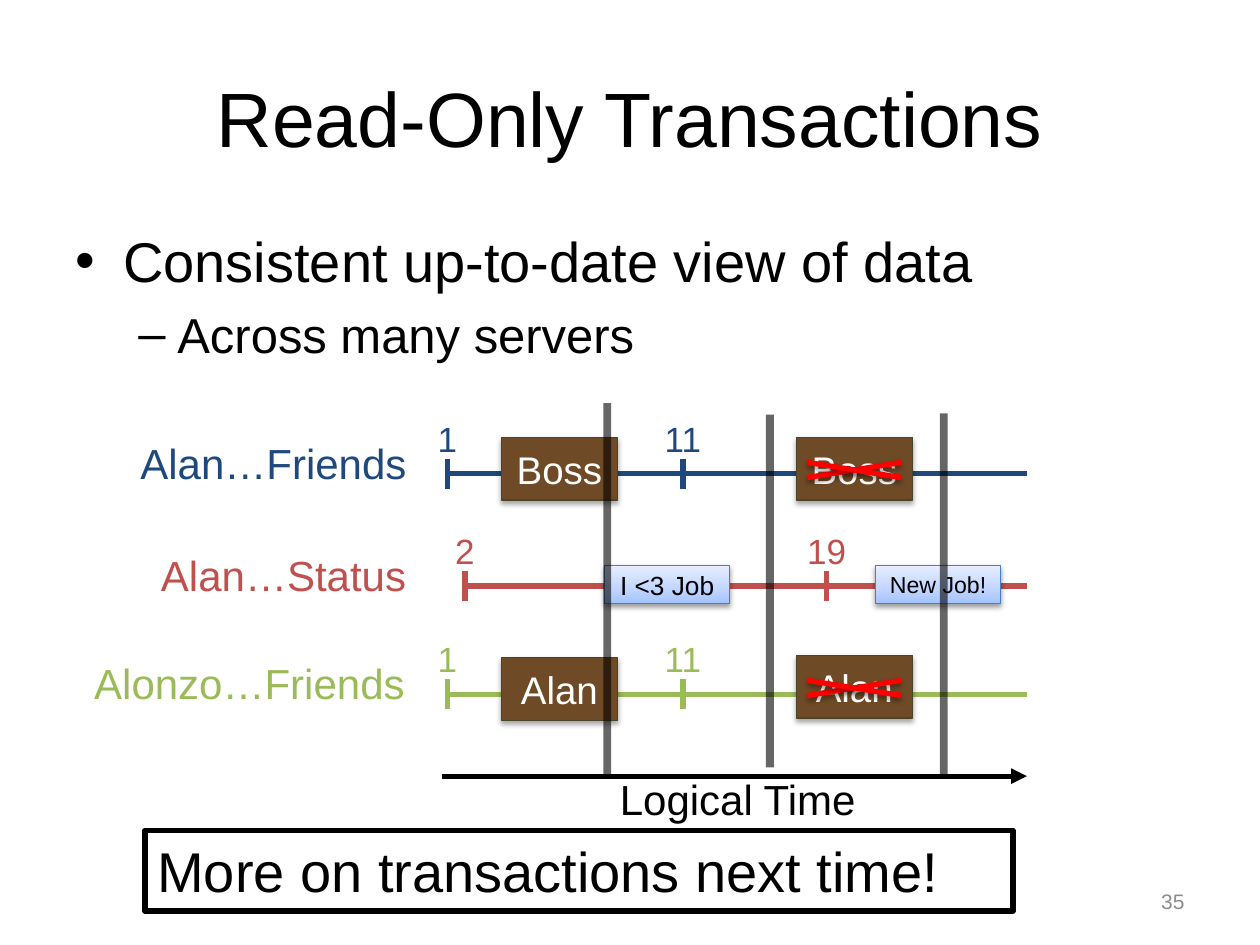
"""Build the Read-Only Transactions slide with its logical timeline diagram."""
from lxml import etree
from pptx import Presentation
from pptx import util as u
from pptx.dml.color import RGBColor
from pptx.enum import shapes, text
from pptx.oxml.ns import qn

BLACK = RGBColor(0x00, 0x00, 0x00)
WHITE = RGBColor(0xFF, 0xFF, 0xFF)
GRAY = RGBColor(0x8C, 0x8C, 0x8C)
NAVY = RGBColor(0x1F, 0x49, 0x7D)
BRICK = RGBColor(0xC0, 0x50, 0x4D)
GREEN = RGBColor(0x9B, 0xBB, 0x59)
BROWN = RGBColor(0x6F, 0x4A, 0x26)
OLIVE = RGBColor(0x4A, 0x45, 0x2A)
BLUE = RGBColor(0x4B, 0x7E, 0xBC)
RED = RGBColor(0xFF, 0x00, 0x00)
STATUS_GRADIENT = [
    (0, RGBColor(0xA4, 0xC4, 0xFF)),
    (35, RGBColor(0xBF, 0xD4, 0xFF)),
    (100, RGBColor(0xE6, 0xEE, 0xFF)),
]

TITLE = "Read-Only Transactions"
BULLETS = [
    ("Consistent up-to-date view of data", 32, "•", 0.38, -0.38, 4),
    ("Across many servers", 28, "–", 0.81, -0.31, 6),
]
TIMELINES = [
    {"label": "Alan…Friends", "width": 2.38, "y": 3.76, "color": NAVY,
     "ticks": [("1", 3.55), ("11", 5.42)],
     "friends": [("Boss", 3.98, 3.47, False), ("Boss", 6.32, 3.47, True)]},
    {"label": "Alan…Status", "width": 2.22, "y": 4.65, "color": BRICK,
     "ticks": [("2", 3.69), ("19", 6.56)],
     "statuses": [("New Job!", 6.95, 13.2), ("I <3 Job", 4.8, 15)]},
    {"label": "Alonzo…Friends", "width": 2.76, "y": 5.51, "color": GREEN,
     "ticks": [("1", 3.55), ("11", 5.42)],
     "friends": [("Alan", 3.98, 5.22, False), ("Alan", 6.32, 5.2, True)]},
]
READ_TIMES = [(4.82, 3.2, 6.16), (6.11, 3.29, 6.09), (7.49, 3.28, 6.16)]
LABEL_RIGHT, AXIS_RIGHT, TICK_HALF = 3.36, 8.15, 0.12
NUMBER_WIDTHS = {1: 0.36, 2: 0.51}
FRIEND_SHADOW, SOFT_SHADOW = (35, 1.8), (38, 1.6)

CENTER = text.PP_ALIGN.CENTER
MIDDLE = text.MSO_ANCHOR.MIDDLE


def apply_format(target, values):
    for name, value in values.items():
        setattr(target, name, value)


def add_child(parent, tag, **attributes):
    values = {name: str(value) for name, value in attributes.items()}
    return etree.SubElement(parent, qn(tag), values)


def add_shadow(effects, shadow):
    alpha, distance = shadow
    outer = add_child(effects, "a:outerShdw", blurRad=u.Pt(3.1), dist=u.Pt(distance),
                      dir=5400000, rotWithShape=0)
    color = add_child(outer, "a:srgbClr", val=BLACK)
    add_child(color, "a:alpha", val=alpha * 1000)


def write(paragraph, words, size, color, **layout):
    run = paragraph.add_run()
    run.text = words
    apply_format(run.font, {"size": u.Pt(size), "name": "Arial"})
    run.font.color.rgb = color
    apply_format(paragraph, layout)


def add_text(slide, box, words, size, color, align=CENTER, wrap=False):
    shape = slide.shapes.add_textbox(*map(u.Inches, box))
    apply_format(shape.text_frame, {"word_wrap": wrap, "vertical_anchor": MIDDLE})
    write(shape.text_frame.paragraphs[0], words, size, color, alignment=align)


def add_bullets(slide, box):
    frame = slide.shapes.add_textbox(*map(u.Inches, box)).text_frame
    frame.word_wrap = True
    for index, (words, size, bullet, margin, indent, gap) in enumerate(BULLETS):
        paragraph = frame.add_paragraph() if index else frame.paragraphs[0]
        write(paragraph, words, size, BLACK, level=index, space_before=u.Pt(gap))
        properties = paragraph._p.get_or_add_pPr()
        properties.set("marL", str(u.Inches(margin)))
        properties.set("indent", str(u.Inches(indent)))
        add_child(properties, "a:buFont", typeface="Arial")
        add_child(properties, "a:buChar", char=bullet)


def add_line(slide, start, end, color, width=3, alpha=None, arrow=False, shadow=None):
    connector = slide.shapes.add_connector(
        shapes.MSO_CONNECTOR.STRAIGHT, *map(u.Inches, (*start, *end)))
    connector.line.width = u.Pt(width)
    connector.line.color.rgb = color
    properties = connector.element.spPr
    outline = properties.find(qn("a:ln"))
    if alpha:
        add_child(next(outline.iter(qn("a:srgbClr"))), "a:alpha", val=alpha * 1000)
    if arrow:
        add_child(outline, "a:tailEnd", type="triangle")
    effects = add_child(properties, "a:effectLst")
    if shadow:
        add_shadow(effects, shadow)


def add_box(slide, box, outline, width=0.75, shadow=None):
    shape = slide.shapes.add_shape(shapes.MSO_SHAPE.RECTANGLE, *map(u.Inches, box))
    shape.line.color.rgb = outline
    shape.line.width = u.Pt(width)
    shape.shadow.inherit = False
    if shadow:
        add_shadow(shape.element.spPr.find(qn("a:effectLst")), shadow)
    apply_format(shape.text_frame, {"word_wrap": False, "vertical_anchor": MIDDLE})
    return shape


def add_friend(slide, name, left, top, removed):
    shape = add_box(slide, (left, top, 0.92, 0.5), OLIVE, shadow=FRIEND_SHADOW)
    shape.fill.solid()
    shape.fill.fore_color.rgb = BROWN
    write(shape.text_frame.paragraphs[0], name, 22, WHITE, alignment=CENTER)
    if removed:
        high, low = top + 0.2, top + 0.32
        for begin, end in ((low, high), (high, low)):
            add_line(slide, (left + 0.09, begin), (left + 0.83, end), RED,
                     shadow=SOFT_SHADOW)


def add_status(slide, words, left, size, y):
    shape = add_box(slide, (left, y - 0.16, 0.99, 0.3), BLUE, shadow=SOFT_SHADOW)
    shape.fill.gradient()
    shape.fill.gradient_angle = 90
    stops = next(shape.element.spPr.iter(qn("a:gsLst")))
    stops.clear()
    for position, color in STATUS_GRADIENT:
        stop = add_child(stops, "a:gs", pos=position * 1000)
        add_child(stop, "a:srgbClr", val=color)
    write(shape.text_frame.paragraphs[0], words, size, BLACK, alignment=CENTER)


def add_timeline(slide, timeline):
    y, color, width = timeline["y"], timeline["color"], timeline["width"]
    add_line(slide, (timeline["ticks"][0][1] + 0.01, y), (AXIS_RIGHT, y), color)
    add_text(slide, (LABEL_RIGHT - width, y - 0.34, width, 0.5),
             timeline["label"], 24, color)
    for number, x in timeline["ticks"]:
        add_line(slide, (x, y - TICK_HALF), (x, y + TICK_HALF), color)
        number_width = NUMBER_WIDTHS[len(number)]
        add_text(slide, (x - number_width / 2, y - 0.5, number_width, 0.44),
                 number, 20, color)
    for friend in timeline.get("friends", []):
        add_friend(slide, *friend)
    for status in timeline.get("statuses", []):
        add_status(slide, *status, y)


def main():
    presentation = Presentation()
    apply_format(presentation, {"slide_width": u.Inches(10), "slide_height": u.Inches(7.5)})
    slide = presentation.slides.add_slide(presentation.slide_layouts[6])
    add_text(slide, (0.5, 0.3, 9, 1.25), TITLE, 44, BLACK, wrap=True)
    add_bullets(slide, (0.5, 1.75, 9, 1.97))
    add_text(slide, (7.17, 6.95, 2.33, 0.4), "35", 12, GRAY, text.PP_ALIGN.RIGHT, True)
    add_line(slide, (3.51, 6.16), (AXIS_RIGHT, 6.16), BLACK, arrow=True)
    add_text(slide, (4.76, 6.09, 2.19, 0.5), "Logical Time", 24, BLACK)
    for timeline in TIMELINES:
        add_timeline(slide, timeline)
    for x, top, bottom in READ_TIMES:
        add_line(slide, (x, top), (x, bottom), BLACK, 4.5, alpha=60)
    callout = add_box(slide, (1.15, 6.59, 6.89, 0.64), BLACK, 3)
    callout.fill.background()
    apply_format(callout.text_frame,
                 {"word_wrap": True, "vertical_anchor": text.MSO_ANCHOR.TOP})
    write(callout.text_frame.paragraphs[0], "More on transactions next time!", 32, BLACK,
          alignment=text.PP_ALIGN.LEFT, space_before=u.Pt(4))
    presentation.save("out.pptx")


if __name__ == "__main__":
    main()
